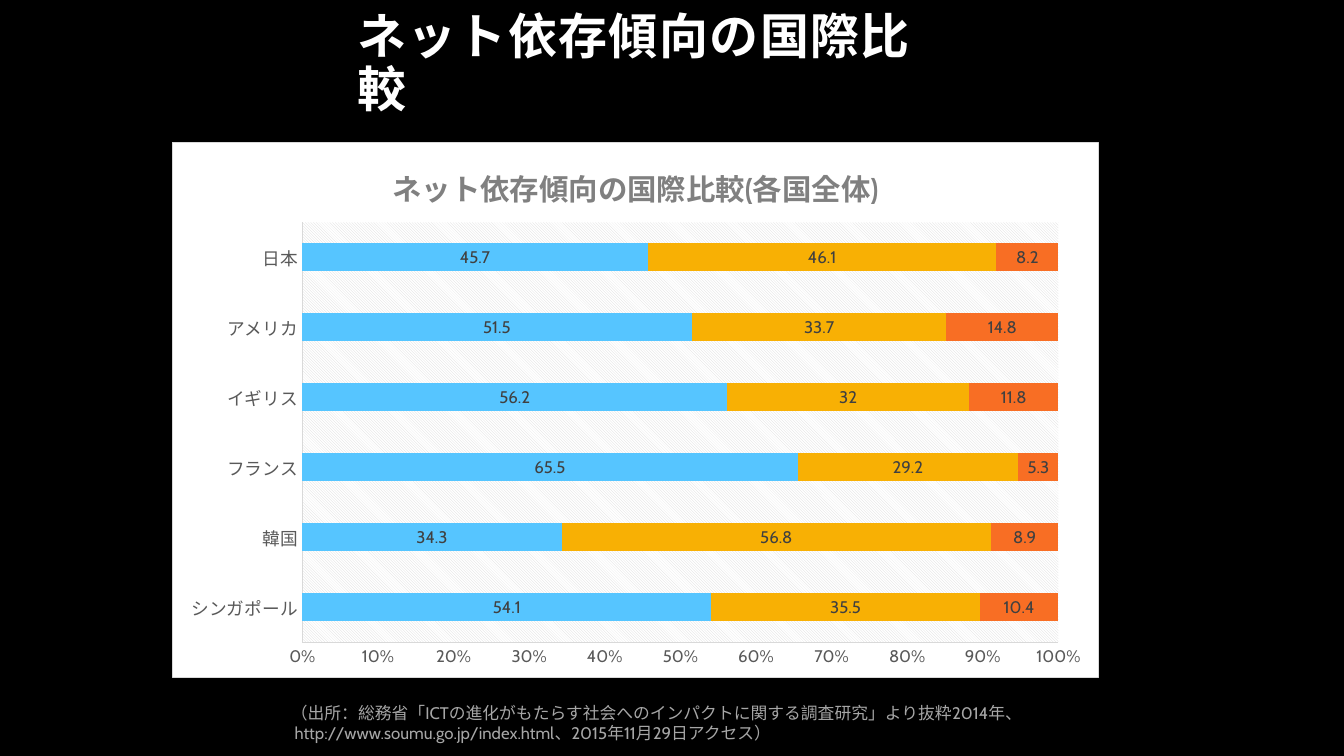
from lxml import etree
from pptx import Presentation
from pptx.chart.data import CategoryChartData
from pptx.dml.color import RGBColor
from pptx.enum.chart import XL_CHART_TYPE, XL_LABEL_POSITION, XL_TICK_MARK
from pptx.enum.text import MSO_ANCHOR, PP_ALIGN
from pptx.oxml import parse_xml
from pptx.oxml.ns import nsdecls, qn
from pptx.util import Pt

PX = 914400 / 100.8
THEME = {
    "latin": "Cabin", "cjk": "Noto Sans CJK JP",
    "background": "000000", "title": "FFFFFF", "source": "A6A6A6",
    "panel": "FFFFFF", "rule": "D9D9D9", "heading": "808080",
    "axis": "595959", "label": "404040",
    "series": ["56C5FF", "F8B004", "F86E24"],
    "title_size": 35, "heading_size": 21, "category_size": 12.6, "small_size": 12,
}
COUNTRIES = ["シンガポール", "韓国", "フランス", "イギリス", "アメリカ", "日本"]
SHARES = [
    [54.1, 34.3, 65.5, 56.2, 51.5, 45.7],
    [35.5, 56.8, 29.2, 32, 33.7, 46.1],
    [10.4, 8.9, 5.3, 11.8, 14.8, 8.2],
]


def px(*lengths):
    return [round(n * PX) for n in lengths]


def style(font, size, color, bold=False, latin=THEME["latin"]):
    """Format a font, including its East Asian typeface."""
    for name, value in {"size": Pt(size), "bold": bold, "name": latin}.items():
        setattr(font, name, value)
    font.color.rgb = RGBColor.from_string(THEME[color])
    ea = etree.Element(qn("a:ea"), typeface=THEME["cjk"])
    font._element.find(qn("a:latin")).addnext(ea)


prs = Presentation()
prs.slide_width, prs.slide_height = px(1344, 756)
s = prs.slides.add_slide(prs.slide_layouts[5])
s.background.fill.solid()
s.background.fill.fore_color.rgb = RGBColor.from_string(THEME["background"])

# Title
title = s.shapes.title
title.left, title.top, title.width, title.height = px(347, 30, 607, 93)
tf = title.text_frame
tf.word_wrap = True
tf.vertical_anchor = MSO_ANCHOR.BOTTOM
p = tf.paragraphs[0]
p.alignment = PP_ALIGN.LEFT
p.line_spacing = 0.9
r = p.add_run()
r.text = "ネット依存傾向の国際比較"
style(r.font, THEME["title_size"], "title", True, THEME["cjk"])
r.font._element.set("spc", "100")

# Chart
data = CategoryChartData()
data.categories = COUNTRIES
for number, values in enumerate(SHARES, 1):
    data.add_series(f"Series {number}", values)
chart = s.shapes.add_chart(
    XL_CHART_TYPE.BAR_STACKED_100, *px(172, 142, 927, 536), data).chart
chart.has_legend = False
style(chart.font, THEME["small_size"], "axis")
chart.has_title = True
chart.chart_title.include_in_layout = False
p = chart.chart_title.text_frame.paragraphs[0]
r = p.add_run()
r.text = "ネット依存傾向の国際比較(各国全体)"
style(r.font, THEME["heading_size"], "heading", True)

for axis, size in ((chart.category_axis, THEME["category_size"]),
                   (chart.value_axis, THEME["small_size"])):
    axis.has_major_gridlines = False
    axis.major_tick_mark = axis.minor_tick_mark = XL_TICK_MARK.NONE
    axis.format.line.color.rgb = RGBColor.from_string(THEME["rule"])
    axis.format.line.width = Pt(0.75)
    style(axis.tick_labels.font, size, "axis")
value_axis = chart.value_axis
value_axis.minimum_scale, value_axis.maximum_scale, value_axis.major_unit = 0, 1, 0.1
value_axis.tick_labels.number_format = "0%"
value_axis.tick_labels.number_format_is_linked = False

plot = chart.plots[0]
plot.gap_width, plot.overlap = 150, 100
for series, color in zip(plot.series, THEME["series"]):
    series.format.fill.solid()
    series.format.fill.fore_color.rgb = RGBColor.from_string(color)
    labels = series.data_labels
    labels.show_value = True
    labels.position = XL_LABEL_POSITION.CENTER
    style(labels.font, THEME["small_size"], "label")

# Panel, hatched plot area and its place within the panel
space = chart._chartSpace
space.find(qn("c:txPr")).addprevious(parse_xml(
    f'<c:spPr {nsdecls("c", "a")}>'
    f'<a:solidFill><a:srgbClr val="{THEME["panel"]}"/></a:solidFill>'
    f'<a:ln w="9525"><a:solidFill><a:srgbClr val="{THEME["rule"]}"/></a:solidFill></a:ln>'
    '</c:spPr>'))
area = space.chart.plotArea
area.append(parse_xml(
    f'<c:spPr {nsdecls("c", "a")}><a:pattFill prst="ltDnDiag">'
    f'<a:fgClr><a:srgbClr val="{THEME["rule"]}"/></a:fgClr>'
    f'<a:bgClr><a:srgbClr val="{THEME["panel"]}"/></a:bgClr>'
    '</a:pattFill><a:ln><a:noFill/></a:ln></c:spPr>'))
for old in area.findall(qn("c:layout")):
    area.remove(old)
area.insert(0, parse_xml(
    f'<c:layout {nsdecls("c")}><c:manualLayout><c:layoutTarget val="inner"/>'
    '<c:xMode val="edge"/><c:yMode val="edge"/>'
    f'<c:x val="{130 / 927:.4f}"/><c:y val="{80 / 536:.4f}"/>'
    f'<c:w val="{757 / 927:.4f}"/><c:h val="{421 / 536:.4f}"/>'
    '</c:manualLayout></c:layout>'))

# Source note
tf = s.shapes.add_textbox(*px(281, 698, 738, 50)).text_frame
tf.word_wrap = True
r = tf.paragraphs[0].add_run()
r.text = ("（出所：総務省「ICTの進化がもたらす社会へのインパクトに関する調査研究」より抜粋2014年、 "
          "http://www.soumu.go.jp/index.html、2015年11月29日アクセス）")
style(r.font, THEME["small_size"], "source")

prs.save("out.pptx")
